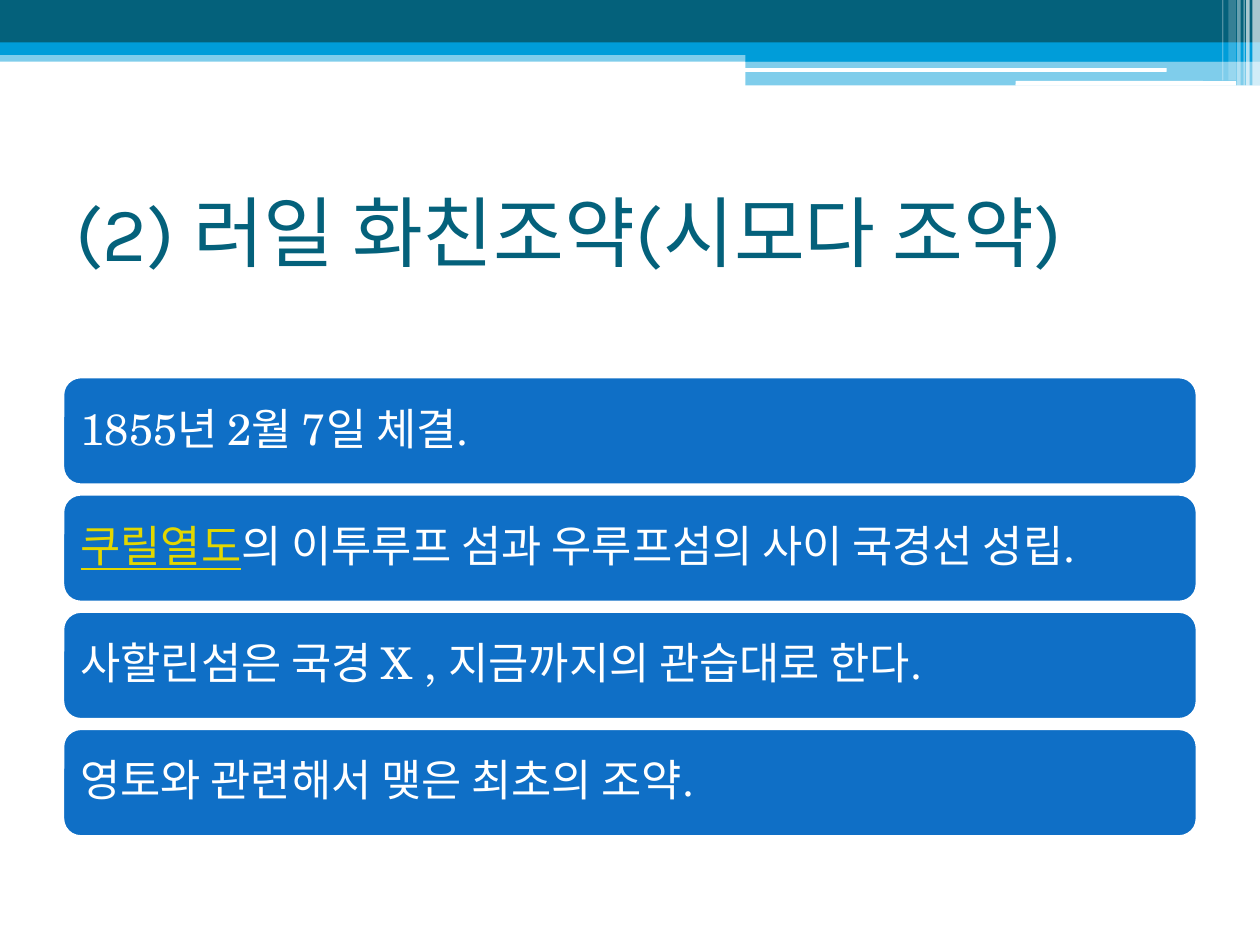
from lxml import etree
from pptx import Presentation
from pptx.dml.color import RGBColor
from pptx.enum import shapes, text
from pptx.oxml import ns
from pptx.util import Pt

TEAL, SKY, BLUE, WHITE, GOLD = "04617B", "009DD9", "0F6FC6", "FFFFFF", "E2D700"
RECT = shapes.MSO_SHAPE.RECTANGLE
ROUND = shapes.MSO_SHAPE.ROUNDED_RECTANGLE

# left, top, width, height, colour, opacity in percent
BANDS = [
    (0, 28.8, 720, 6.5, SKY, 50),
    (0, 0, 720, 24.5, TEAL, 100),
    (0, 24.2, 720, 7.2, SKY, 100),
    (426, 28.1, 294, 7.2, SKY, 100),
    (426, 34.8, 294, 14, SKY, 50),
]
# left, top, width, height
BARS = [(425.5, 38.9, 241.2, 2.2), (580.3, 46.3, 126, 2.7)]
# left, width, height, opacity in percent
STRIPES = [
    (715.7, 4.3, 49, 65),
    (712.1, 2, 49, 65),
    (710.6, 0.7, 49, 60),
    (707, 2, 49, 40),
    (702, 4.3, 46, 20),
    (698.4, 0.7, 46, 30),
]
# each row is a list of (words, colour, underline)
ROWS = [
    [("1855년 2월 7일 체결.", WHITE, False)],
    [("쿠릴열도", GOLD, True),
     ("의 이투루프 섬과 우루프섬의 사이 국경선 성립.", WHITE, False)],
    [("사할린섬은 국경 X , 지금까지의 관습대로 한다.", WHITE, False)],
    [("영토와 관련해서 맺은 최초의 조약.", WHITE, False)],
]


def rgb(code):
    return RGBColor.from_string(code)


def block(slide, kind, box, color, alpha=100):
    """Add a filled shape without outline; alpha is its opacity in percent."""
    shape = slide.shapes.add_shape(kind, *map(Pt, box))
    shape.shadow.inherit = False
    shape.line.fill.background()
    shape.fill.solid()
    shape.fill.fore_color.rgb = rgb(color)
    if alpha < 100:
        tint = shape.fill._xPr.find(".//" + ns.qn("a:srgbClr"))
        etree.SubElement(tint, ns.qn("a:alpha"), val=str(alpha * 1000))
    return shape


def style(run, font, size, color, under=False):
    run.font.name = font
    run.font.size = Pt(size)
    run.font.color.rgb = rgb(color)
    run.font.underline = under


def header(slide):
    for *box, color, alpha in BANDS:
        block(slide, RECT, box, color, alpha)
    for box in BARS:
        block(slide, ROUND, box, WHITE)
    for left, width, height, alpha in STRIPES:
        block(slide, RECT, (left, 0, width, height), WHITE, alpha)


def title(slide, words):
    frame = slide.shapes.add_textbox(*map(Pt, (36, 90, 648, 84))).text_frame
    frame.word_wrap = True
    frame.vertical_anchor = text.MSO_ANCHOR.MIDDLE
    frame.text = words
    style(frame.paragraphs[0].runs[0], "Karla", 44, TEAL)


def row(slide, top, parts):
    shape = block(slide, ROUND, (36, top, 648, 61.5), BLUE)
    shape.line.color.rgb = rgb(WHITE)
    shape.line.width = Pt(1.5)
    frame = shape.text_frame
    frame.word_wrap = True
    frame.vertical_anchor = text.MSO_ANCHOR.MIDDLE
    frame.margin_left = frame.margin_right = Pt(7.2)
    frame.margin_top = frame.margin_bottom = Pt(7.2)
    para = frame.paragraphs[0]
    para.alignment = text.PP_ALIGN.LEFT
    para.line_spacing = 0.9
    for words, color, under in parts:
        run = para.add_run()
        run.text = words
        style(run, "TeX Gyre Schola", 25, color, under)


def main():
    deck = Presentation()
    deck.slide_width, deck.slide_height = Pt(720), Pt(540)
    slide = deck.slides.add_slide(deck.slide_layouts[6])
    header(slide)
    title(slide, "(2) 러일 화친조약(시모다 조약)")
    for i, parts in enumerate(ROWS):
        row(slide, 215.5 + 67 * i, parts)
    deck.save("out.pptx")


if __name__ == "__main__":
    main()
